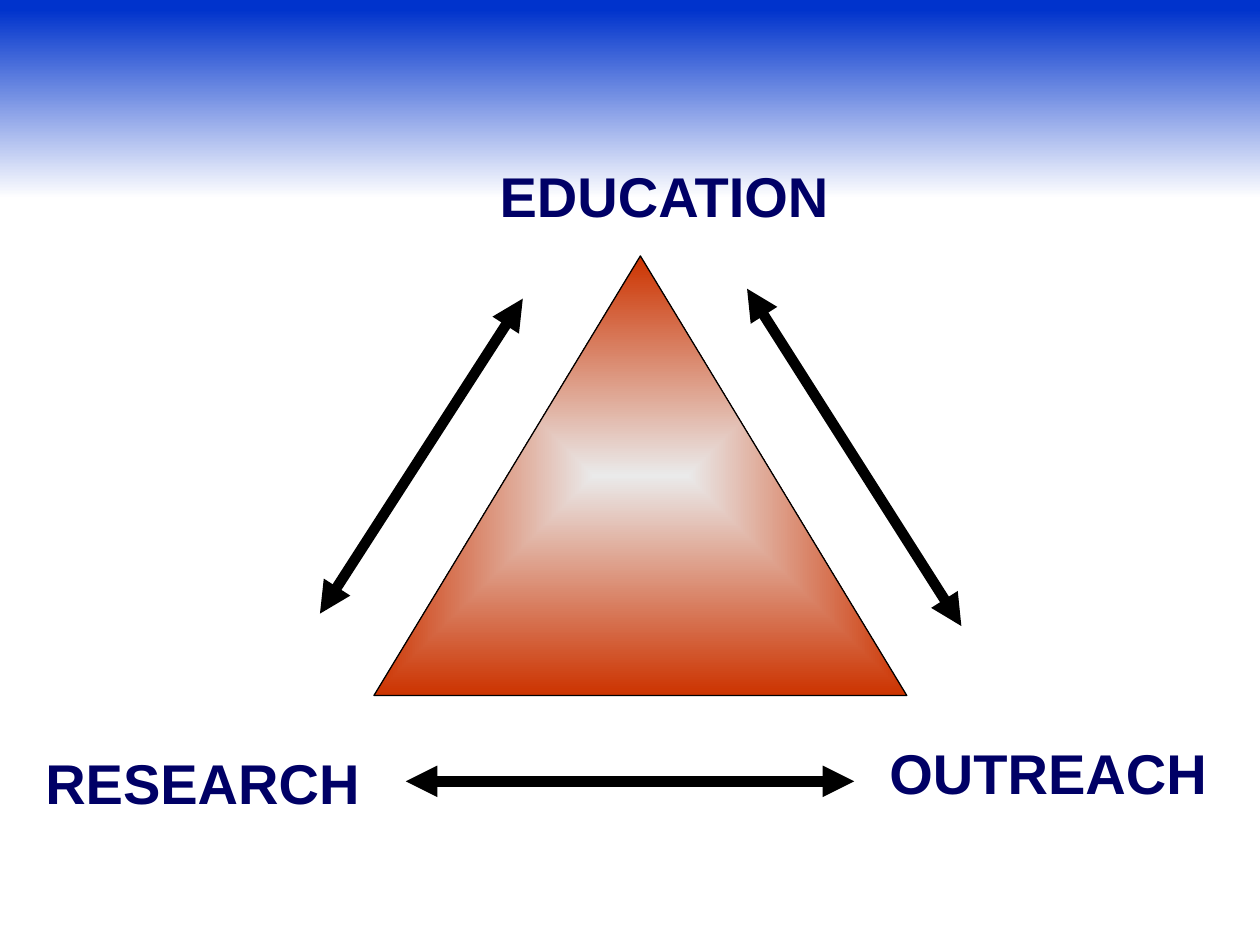
"""Build a slide linking education, research and outreach around a triangle."""
from lxml import etree
from pptx import Presentation
from pptx.dml.color import RGBColor
from pptx.enum.shapes import MSO_CONNECTOR, MSO_SHAPE
from pptx.enum.text import MSO_ANCHOR, MSO_AUTO_SIZE, PP_ALIGN
from pptx.oxml.ns import qn
from pptx.util import Cm, Pt

CENTER, LEFT = PP_ALIGN.CENTER, PP_ALIGN.LEFT
MIDDLE, TOP = MSO_ANCHOR.MIDDLE, MSO_ANCHOR.TOP
FIXED, GROW = MSO_AUTO_SIZE.NONE, MSO_AUTO_SIZE.SHAPE_TO_FIT_TEXT
STRAIGHT = MSO_CONNECTOR.STRAIGHT
TRIANGLE = MSO_SHAPE.ISOSCELES_TRIANGLE

THEME = {
    "line": RGBColor(0, 0, 0),
    "outline": Pt(0.75),
    "arrow": Pt(6),
    "font": {"name": "Arial", "size": Pt(32), "bold": True},
    "text": RGBColor(0x00, 0x00, 0x66),
    "sky": [(0, "FFFFFF"), (72, "FFFFFF"), (79, "FFFFFF"), (99, "0033CC")],
    "glow": [(0, "EAEAEA"), (100, "CC3300")],
}

LABELS = [
    {"text": "EDUCATION", "at": (0, 2.34, 25.4, 3.18), "align": CENTER,
     "frame": {"word_wrap": True, "auto_size": FIXED,
               "vertical_anchor": MIDDLE, "margin_left": Cm(1.63)}},
    {"text": "RESEARCH", "at": (0.58, 14.96, 7.01, 1.6), "align": CENTER,
     "frame": {"word_wrap": True, "auto_size": GROW, "vertical_anchor": TOP}},
    {"text": "OUTREACH", "at": (17.68, 14.76, 6.91, 1.6), "align": LEFT,
     "frame": {"word_wrap": False, "auto_size": GROW, "vertical_anchor": TOP}},
]
TRIANGLE_AT = (7.54, 5.16, 10.74, 8.86)
ARROWS = [
    (15.06, 5.82, 19.38, 12.62),
    (8.18, 15.75, 17.22, 15.75),
    (10.54, 6.02, 6.45, 12.37),
]


def lengths(values):
    return [Cm(value) for value in values]


def set_values(target, values):
    for name, value in values.items():
        setattr(target, name, value)


def add_gradient(owner, fill, stops, angle=None):
    fill.solid()
    solid = owner.find(".//" + qn("a:solidFill"))
    gradient = etree.Element(qn("a:gradFill"), rotWithShape="1")
    stop_list = etree.SubElement(gradient, qn("a:gsLst"))
    for percent, color in stops:
        stop = etree.SubElement(stop_list, qn("a:gs"), pos=str(percent * 1000))
        etree.SubElement(stop, qn("a:srgbClr"), val=color)
    if angle is None:
        shading = etree.SubElement(gradient, qn("a:path"), path="shape")
        middle = dict.fromkeys("ltrb", "50000")
        etree.SubElement(shading, qn("a:fillToRect"), middle)
    else:
        etree.SubElement(gradient, qn("a:lin"), ang=str(angle * 60000), scaled="0")
    solid.getparent().replace(solid, gradient)


def add_triangle(page):
    triangle = page.shapes.add_shape(TRIANGLE, *lengths(TRIANGLE_AT))
    triangle.shadow.inherit = False
    add_gradient(triangle.element.spPr, triangle.fill, THEME["glow"])
    triangle.line.color.rgb = THEME["line"]
    triangle.line.width = THEME["outline"]


def add_label(page, label):
    box = page.shapes.add_textbox(*lengths(label["at"]))
    set_values(box.text_frame, label["frame"])
    para = box.text_frame.paragraphs[0]
    para.alignment = label["align"]
    span = para.add_run()
    span.text = label["text"]
    set_values(span.font, THEME["font"])
    span.font.color.rgb = THEME["text"]


def add_arrow(page, ends):
    arrow = page.shapes.add_connector(STRAIGHT, *lengths(ends))
    arrow.line.color.rgb = THEME["line"]
    arrow.line.width = THEME["arrow"]
    properties = arrow.element.spPr
    outline = properties.find(qn("a:ln"))
    for end in ("a:headEnd", "a:tailEnd"):
        etree.SubElement(outline, qn(end), type="triangle")
    etree.SubElement(properties, qn("a:effectLst"))


def main():
    deck = Presentation()
    deck.slide_width, deck.slide_height = Cm(25.4), Cm(19.05)
    page = deck.slides.add_slide(deck.slide_layouts[6])
    add_gradient(page.element, page.background.fill, THEME["sky"], angle=270)
    add_triangle(page)
    for label in LABELS:
        add_label(page, label)
    for ends in ARROWS:
        add_arrow(page, ends)
    deck.save("out.pptx")


if __name__ == "__main__":
    main()
